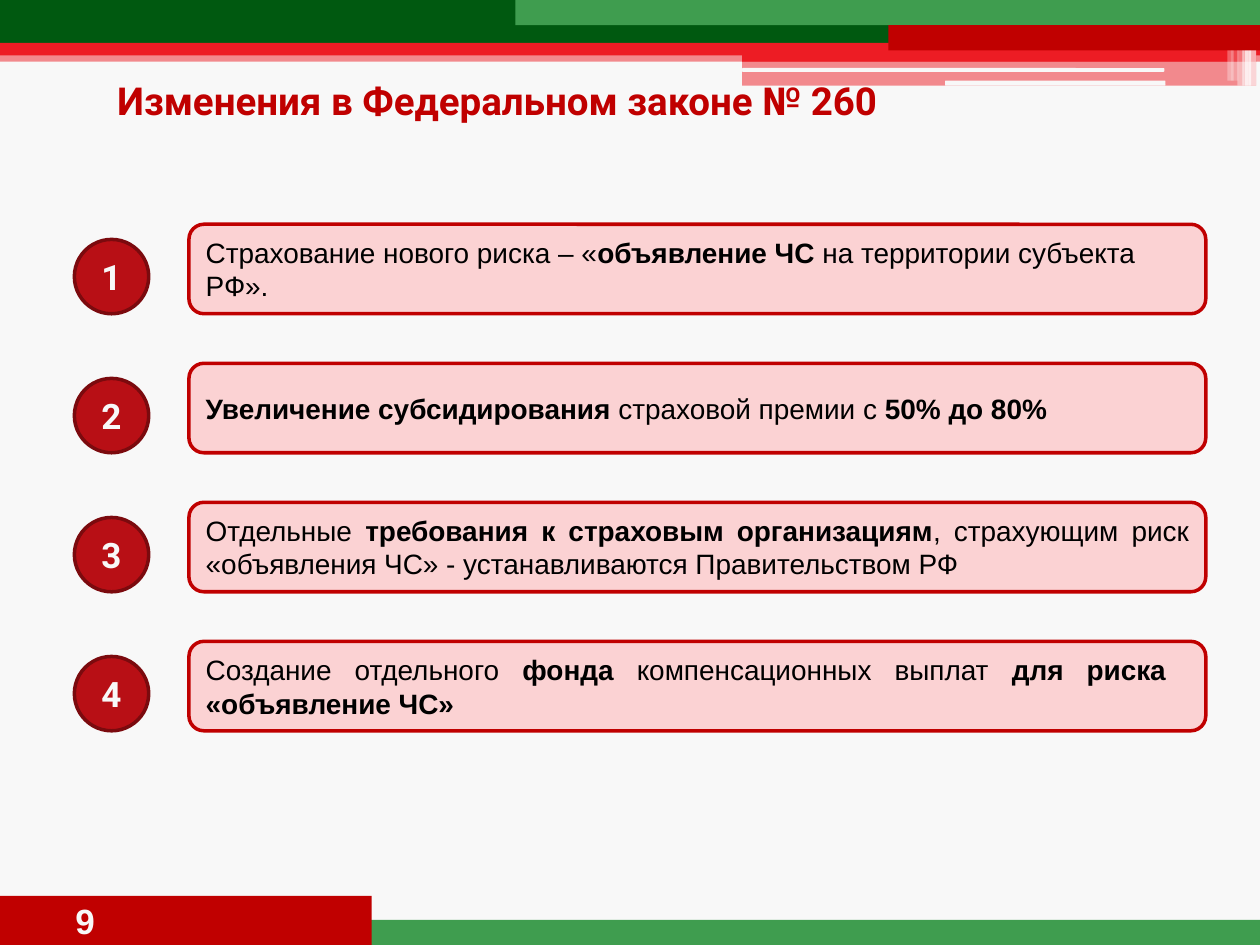
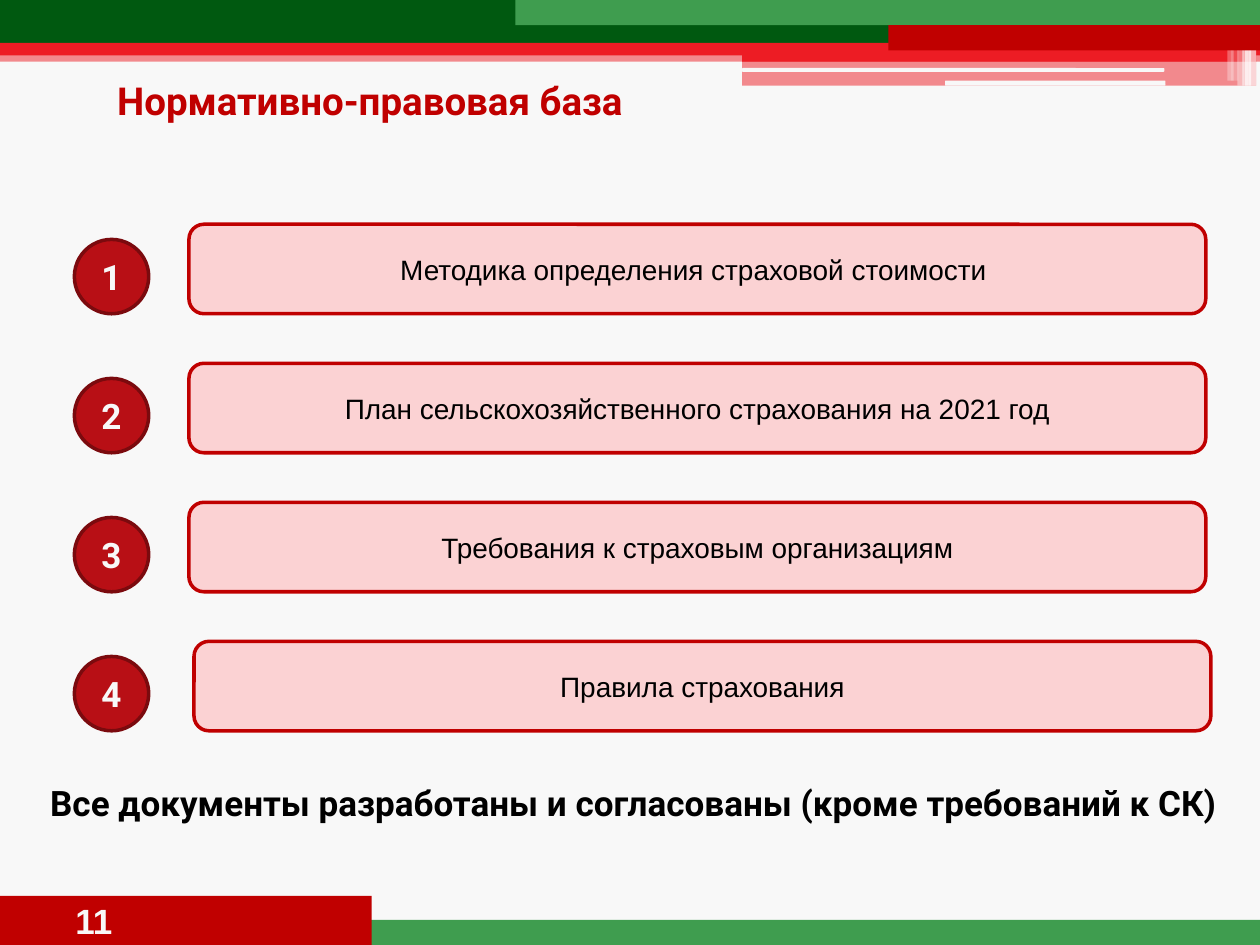
from lxml.etree import SubElement
from pptx import Presentation
from pptx.dml.color import RGBColor
from pptx.enum.shapes import MSO_SHAPE
from pptx.enum.text import MSO_ANCHOR, MSO_AUTO_SIZE, PP_ALIGN
from pptx.oxml.ns import qn
from pptx.util import Inches, Pt

PAPER, WHITE, BLACK = "F8F8F8", "FFFFFF", "000000"
DARK_GREEN, GREEN = "005910", "3F9D4F"
BRIGHT_RED, RED = "ED1C24", "C00000"
PINK, BADGE_RED, BADGE_EDGE = "FBD2D3", "B80F15", "7B0A0E"
HEADING_FONT, BODY_FONT = "Roboto", "Arial"

RECT, ROUND = MSO_SHAPE.RECTANGLE, MSO_SHAPE.ROUNDED_RECTANGLE
BANDS = [
    (RECT, (0, 0.4, 10, 0.09), BRIGHT_RED, 50),
    (RECT, (0, 0, 10, 0.34), DARK_GREEN, 100),
    (RECT, (0, 0.34, 10, 0.1), BRIGHT_RED, 100),
    (RECT, (5.89, 0.39, 4.08, 0.1), BRIGHT_RED, 100),
    (RECT, (5.89, 0.48, 4.08, 0.2), BRIGHT_RED, 50),
    (ROUND, (5.89, 0.54, 3.35, 0.03), PAPER, 100),
    (ROUND, (7.5, 0.64, 1.75, 0.04), PAPER, 100),
    (RECT, (9.91, 0, 0.06, 0.68), WHITE, 65),
    (RECT, (9.88, 0, 0.05, 0.68), WHITE, 65),
    (RECT, (9.86, 0, 0.05, 0.68), WHITE, 60),
    (RECT, (9.82, 0, 0.05, 0.68), WHITE, 40),
    (RECT, (9.77, 0, 0.06, 0.64), WHITE, 20),
    (RECT, (9.74, 0, 0.05, 0.64), WHITE, 30),
    (RECT, (0, 7.3, 10, 0.2), GREEN, 100),
    (RECT, (4.09, 0, 5.91, 0.2), GREEN, 100),
    (RECT, (7.05, 0.2, 2.95, 0.2), RED, 100),
]

LIST_BOX = (0.59, 1.78, 8.98, 4.02)
ROW_HEIGHT, BADGE_SIZE, CARD_INDENT = 0.71, 0.59, 0.91

LAW_CHANGES = [
    ("Страхование нового риска – «*объявление ЧС* на территории субъекта РФ».", PP_ALIGN.LEFT, 0),
    ("*Увеличение субсидирования *страховой премии с *50% до 80%*", PP_ALIGN.LEFT, 0),
    ("Отдельные *требования к страховым организациям*, страхующим риск "
     "«объявления ЧС» - устанавливаются Правительством РФ", PP_ALIGN.JUSTIFY, 0),
    ("Создание отдельного *фонда *компенсационных выплат *для риска *\n*«объявление ЧС»*",
     PP_ALIGN.JUSTIFY, 0),
]
DOCUMENTS = [
    ("Методика определения страховой стоимости ", PP_ALIGN.CENTER, 0),
    ("План сельскохозяйственного страхования на 2021 год", PP_ALIGN.CENTER, 0),
    ("Требования к страховым организациям", PP_ALIGN.CENTER, 0),
    ("Правила страхования", PP_ALIGN.CENTER, 0.04),
]


def paint(fill, color, opacity=100):
    fill.solid()
    fill.fore_color.rgb = RGBColor.from_string(color)
    if opacity < 100:
        tint = fill.fore_color._xFill.find(qn("a:srgbClr"))
        SubElement(tint, qn("a:alpha"), val=str(opacity * 1000))


def add_block(page, kind, box, color, opacity=100, edge=None):
    block = page.shapes.add_shape(kind, *map(Inches, box))
    block.shadow.inherit = False
    paint(block.fill, color, opacity)
    if edge:
        paint(block.line.fill, edge)
        block.line.width = Pt(2)
    else:
        block.line.fill.background()
    return block


def write(shape, text, font, size, color, bold=False, align=PP_ALIGN.LEFT):
    frame = shape.text_frame
    frame.word_wrap = True
    frame.vertical_anchor = MSO_ANCHOR.MIDDLE
    para = frame.paragraphs[0]
    para.alignment = align
    para.font.name, para.font.size, para.font.bold = font, Pt(size), bold
    paint(para.font.fill, color)
    for index, piece in enumerate(text.split("*")):
        if piece == "\n":
            para.add_line_break()
        elif piece:
            span = para.add_run()
            span.text = piece
            paint(span.font.fill, color)
            if index % 2:
                span.font.bold = True
    return para


def move_bands_to_layout(page, layout):
    for number, (kind, box, color, opacity) in enumerate(BANDS, 100):
        band = add_block(page, kind, box, color, opacity)
        band.element.xpath(".//p:cNvPr")[0].set("id", str(number))
        layout.shapes.element.append(band.element)


def add_title(page, box, text):
    title = page.shapes.title
    title.left, title.top, title.width, title.height = map(Inches, box)
    write(title, text, HEADING_FONT, 22, RED, True)
    title.text_frame.auto_size = MSO_AUTO_SIZE.NONE


def add_page_number(page, box, number):
    plate = add_block(page, RECT, box, RED)
    write(plate, number, BODY_FONT, 20, PAPER, True).level = 1


def add_numbered_cards(page, box, rows):
    left, top, width, height = box
    pitch = (height - ROW_HEIGHT) / (len(rows) - 1)
    for index, (text, align, shift) in enumerate(rows):
        row_top = top + index * pitch
        card_box = (left + CARD_INDENT + shift, row_top, width - CARD_INDENT, ROW_HEIGHT)
        card = add_block(page, ROUND, card_box, PINK, edge=RED)
        write(card, text, BODY_FONT, 16, BLACK, align=align)
        badge_box = (left, row_top + ROW_HEIGHT - BADGE_SIZE, BADGE_SIZE, BADGE_SIZE)
        badge = add_block(page, MSO_SHAPE.OVAL, badge_box, BADGE_RED, edge=BADGE_EDGE)
        write(badge, str(index + 1), HEADING_FONT, 20, PAPER, True, PP_ALIGN.CENTER)


def add_conclusion(page, box, text):
    note = page.shapes.add_textbox(*map(Inches, box))
    write(note, text, HEADING_FONT, 20, BLACK, True, PP_ALIGN.CENTER)
    note.text_frame.word_wrap = False


def add_list_page(deck, layout, title, number, rows):
    page = deck.slides.add_slide(layout)
    add_page_number(page, (0, 7.11, 2.95, 0.39), number)
    add_title(page, (0.83, 0.44, 9.06, 0.71), title)
    add_numbered_cards(page, LIST_BOX, rows)
    return page


def main():
    deck = Presentation()
    deck.slide_width, deck.slide_height = Inches(10), Inches(7.5)
    paint(deck.slide_master.background.fill, PAPER)
    layout = deck.slide_layouts.get_by_name("Title Only")

    law_page = add_list_page(deck, layout, "Изменения в Федеральном законе № 260", "9", LAW_CHANGES)
    move_bands_to_layout(law_page, layout)

    documents_page = add_list_page(deck, layout, "Нормативно-правовая база", "11", DOCUMENTS)
    add_conclusion(documents_page, (0.2, 6.15, 9.66, 0.44),
                   "Все документы разработаны и согласованы (кроме требований к СК)")
    deck.save("out.pptx")


if __name__ == "__main__":
    main()
